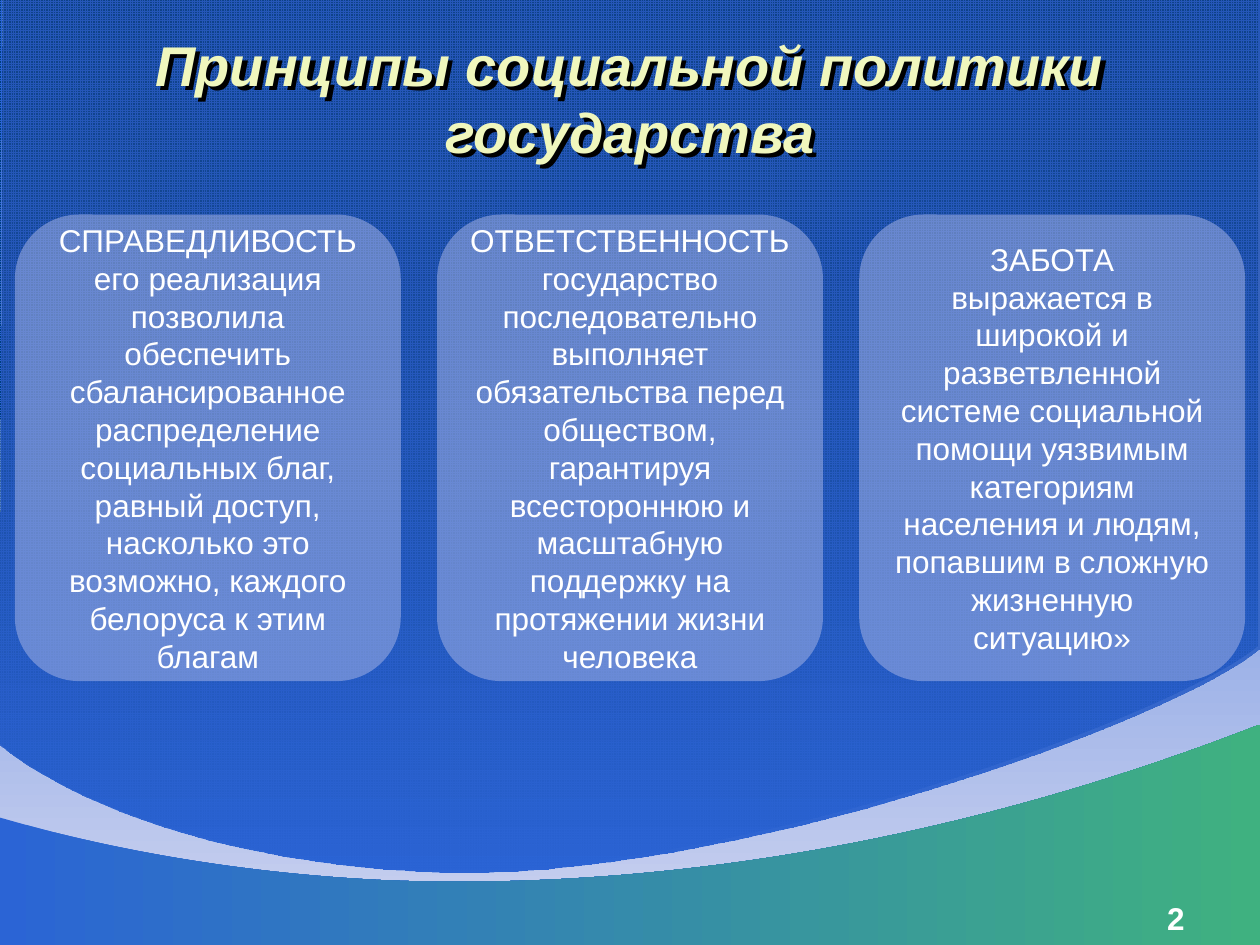
from lxml.etree import SubElement
from pptx import Presentation
from pptx.dml.color import RGBColor
from pptx.enum.dml import MSO_PATTERN
from pptx.enum.shapes import MSO_SHAPE
from pptx.enum.text import MSO_ANCHOR, PP_ALIGN
from pptx.oxml.ns import qn
from pptx.util import Pt

TITLE = "Принципы социальной политики государства"
CARDS = [
    ("СПРАВЕДЛИВОСТЬ", "его реализация позволила обеспечить сбалансированное распределение "
     "социальных благ, равный доступ, насколько это возможно, каждого белоруса к этим благам"),
    ("ОТВЕТСТВЕННОСТЬ", "государство последовательно выполняет обязательства перед обществом, "
     "гарантируя всестороннюю и масштабную поддержку на протяжении жизни человека"),
    ("ЗАБОТА", "выражается в широкой и разветвленной системе социальной помощи уязвимым "
     "категориям населения и людям, попавшим в сложную жизненную ситуацию»"),
]
PAGE = "2"

WAVES = {
    "grid": dict(curve=[(-1, 424), (8, 433), (79, 489), (246, 497), (413, 503), (672, 409), (719, 369)],
                 corners=[(719, -1), (0, -1)]),
    "sky": dict(curve=[(0, 425), (9, 433), (81, 490), (247, 498), (414, 505), (674, 410), (720, 370)],
                corners=[(720, -1), (2, 0)]),
    "ground": dict(curve=[(-1, 467), (8, 469), (93, 497), (220, 503), (346, 508), (520, 492), (720, 414)],
                   corners=[(720, 540), (-2, 540)]),
}
THEME = dict(font="Arial", title_size=32, text_size=18, title="F0F7BD", text="FFFFFF", card="ACB8E7",
             blue="2B64D5", pale="CED4F0", navy="003D7B", deep="1F4898", green="3FB180", shadow="000000")
WIDTH, HEIGHT = 720, 540
CARD_W, CARD_H, CARD_TOP, MARGIN = 220.5, 266.6, 122.6, 8.5


def color(name):
    return RGBColor.from_string(THEME[name])


def set_alpha(sp, percent):
    clr = next(sp._element.spPr.iter(qn("a:srgbClr")))
    SubElement(clr, qn("a:alpha"), val=str(percent * 1000))


def set_gradient(fill, first, last, angle):
    fill.gradient()
    fill.gradient_angle = angle
    for stop, name in zip(fill.gradient_stops, (first, last)):
        stop.color.rgb = color(name)


def write(tf, text, size="text_size", fill="text", align=PP_ALIGN.CENTER,
          anchor=MSO_ANCHOR.MIDDLE, bold=False, italic=False):
    """Fill a text frame with one paragraph per line of text."""
    tf.word_wrap = True
    tf.vertical_anchor = anchor
    tf.text = text
    for p in tf.paragraphs:
        p.alignment = align
        for r in p.runs:
            r.font.name, r.font.size = THEME["font"], Pt(THEME[size])
            r.font.bold, r.font.italic = bold, italic
            r.font.color.rgb = color(fill)


def add_shadow(sp):
    sp.fill.background()
    effects = SubElement(sp._element.spPr, qn("a:effectLst"))
    shadow = SubElement(effects, qn("a:outerShdw"), dist=str(Pt(3.5)), dir="2700000", algn="ctr", rotWithShape="0")
    SubElement(shadow, qn("a:srgbClr"), val=THEME["shadow"])


def bend(sp, count):
    """Turn the first count line segments into cubic curves, three points to each."""
    lines = list(sp._element.spPr.iter(qn("a:lnTo")))[:count]
    for i in range(0, count, 3):
        cubic = lines[i].makeelement(qn("a:cubicBezTo"))
        lines[i].addprevious(cubic)
        for line in lines[i:i + 3]:
            cubic.append(line[0])
            line.getparent().remove(line)


def add_wave(shapes, curve, corners):
    start, *rest = [(Pt(x), Pt(y)) for x, y in curve + corners]
    builder = shapes.build_freeform(*start)
    builder.add_line_segments(rest, close=True)
    sp = builder.convert_to_shape()
    bend(sp, len(curve) - 1)
    sp.shadow.inherit = False
    sp.line.fill.background()
    return sp


def add_card(shapes, i, text):
    pitch = (WIDTH - 2 * MARGIN - CARD_W) / (len(CARDS) - 1)
    sp = shapes.add_shape(MSO_SHAPE.ROUNDED_RECTANGLE, Pt(MARGIN + i * pitch), Pt(CARD_TOP),
                          Pt(CARD_W), Pt(CARD_H))
    sp.shadow.inherit = False
    sp.line.fill.background()
    sp.fill.solid()
    sp.fill.fore_color.rgb = color("card")
    set_alpha(sp, 50)
    write(sp.text_frame, text)


def main():
    prs = Presentation()
    prs.slide_width, prs.slide_height = Pt(WIDTH), Pt(HEIGHT)
    s = prs.slides.add_slide(prs.slide_layouts[5])
    shapes = s.shapes
    set_gradient(s.background.fill, "blue", "pale", 270)

    grid, sky, ground = [add_wave(shapes, **wave) for wave in WAVES.values()]
    grid.fill.patterned()
    grid.fill.pattern = MSO_PATTERN.SMALL_GRID
    grid.fill.fore_color.rgb, grid.fill.back_color.rgb = color("blue"), color("navy")
    set_gradient(sky.fill, "deep", "blue", 270)
    set_alpha(sky, 46)
    set_gradient(ground.fill, "blue", "green", 0)

    title = shapes.title
    title.left, title.top, title.width, title.height = Pt(36), Pt(21.6), Pt(648), Pt(68.4)
    write(title.text_frame, TITLE, size="title_size", fill="title", bold=True, italic=True)
    add_shadow(title)
    shapes._spTree.append(title._element)

    for i, card in enumerate(CARDS):
        add_card(shapes, i, "\n".join(card))

    number = shapes.add_textbox(Pt(516), Pt(510), Pt(168), Pt(19.4))
    write(number.text_frame, PAGE, align=PP_ALIGN.RIGHT, anchor=MSO_ANCHOR.TOP, bold=True)
    prs.save("out.pptx")


if __name__ == "__main__":
    main()
